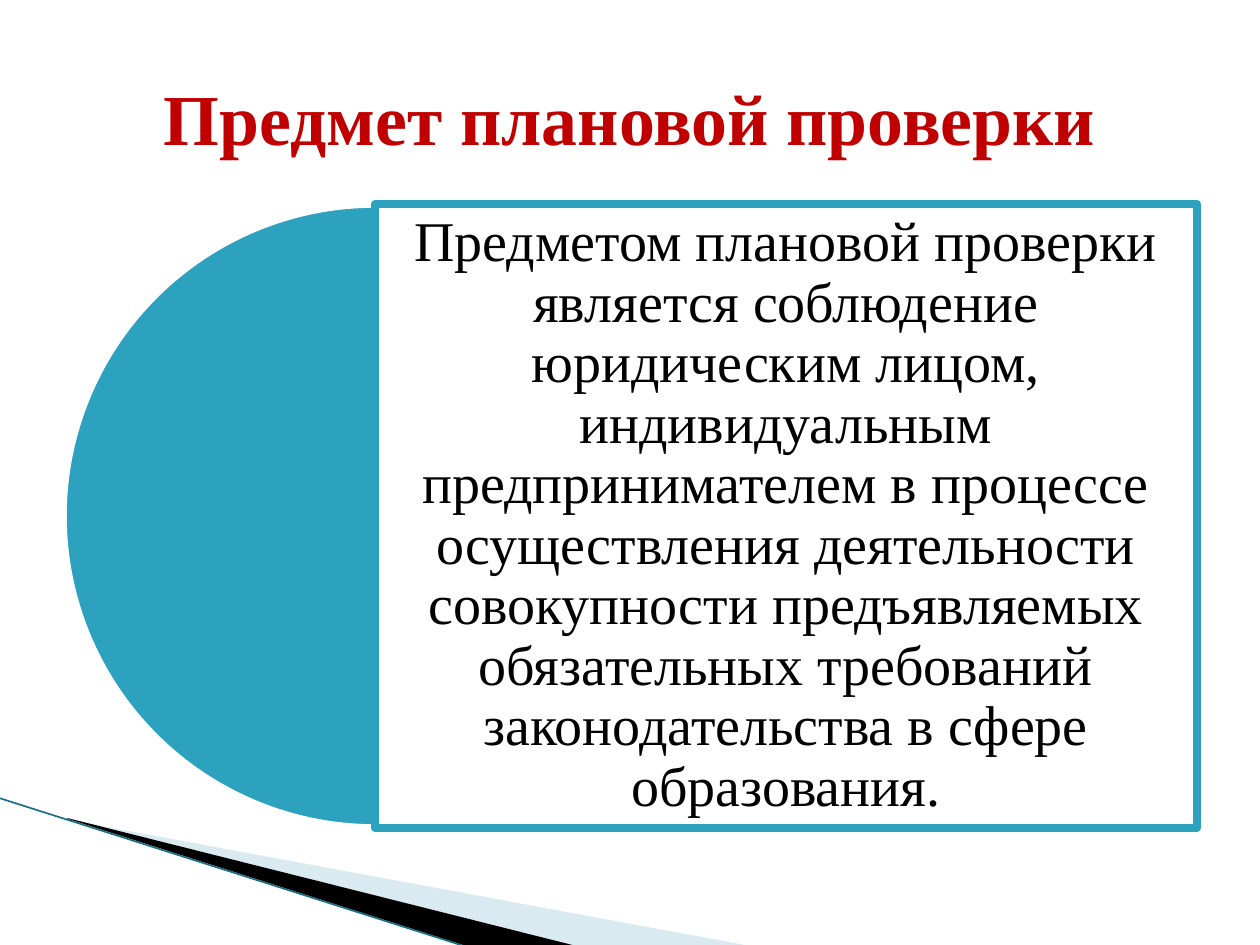
import dataclasses

import lxml.etree
import pptx
import pptx.dml.color
import pptx.enum.shapes
import pptx.enum.text
import pptx.oxml.ns
import pptx.util

EMU_PER_PX = 914400 / 126


@dataclasses.dataclass(frozen=True)
class Theme:
    font: str = "Times New Roman"
    title_size: int = 41
    body_size: int = 32
    border: float = 4.33
    hairline: float = 0.95
    title: str = "C00000"
    text: str = "000000"
    accent: str = "2DA2BF"
    paper: str = "FFFFFF"
    pale: str = "A0CBDC"
    edge: str = "1B6F85"


THEME = Theme()


def px(length):
    return pptx.util.Emu(round(length * EMU_PER_PX))


def rgb(color):
    return pptx.dml.color.RGBColor.from_string(color)


def paint(shape, fill, line=None, opacity=100):
    shape.shadow.inherit = False
    shape.fill.solid()
    shape.fill.fore_color.rgb = rgb(fill)
    if opacity < 100:
        color = shape.fill._xPr.find(".//" + pptx.oxml.ns.qn("a:srgbClr"))
        alpha = lxml.etree.SubElement(color, pptx.oxml.ns.qn("a:alpha"))
        alpha.set("val", str(opacity * 1000))
    if line:
        shape.line.color.rgb = rgb(line)
        shape.line.width = pptx.util.Pt(THEME.border)
    else:
        shape.line.fill.background()


def write(frame, text, size, color, bold=False):
    frame.word_wrap = True
    frame.vertical_anchor = pptx.enum.text.MSO_ANCHOR.MIDDLE
    paragraph = frame.paragraphs[0]
    paragraph.text = text
    paragraph.alignment = pptx.enum.text.PP_ALIGN.CENTER
    paragraph.font.name = THEME.font
    paragraph.font.size = pptx.util.Pt(size)
    paragraph.font.bold = bold
    paragraph.font.color.rgb = rgb(color)
    return paragraph


def add_corner(slide, left, top):
    """Sweeping wedges and edge line in the lower left corner."""
    wedges = [
        ([(70, 22), (751, 148), (576, 148), (70, 21)], THEME.pale, 40),
        ([(68, 20), (577, 148), (470, 149), (69, 21)], THEME.text, 100),
    ]
    for points, color, opacity in wedges:
        corners = [(left + x, top + y) for x, y in points]
        builder = slide.shapes.build_freeform(*corners[0], scale=EMU_PER_PX)
        builder.add_line_segments(corners[1:], close=True)
        paint(builder.convert_to_shape(), color, opacity=opacity)

    edge = slide.shapes.add_connector(
        pptx.enum.shapes.MSO_CONNECTOR.STRAIGHT,
        px(left), px(top), px(left + 468), px(top + 149))
    edge.line.color.rgb = rgb(THEME.edge)
    edge.line.width = pptx.util.Pt(THEME.hairline)
    properties = edge._element.spPr
    lxml.etree.SubElement(properties, pptx.oxml.ns.qn("a:effectLst"))


def add_title(slide, left, top, width, height, text):
    title = slide.shapes.title
    title.left, title.top = px(left), px(top)
    title.width, title.height = px(width), px(height)
    write(title.text_frame, text, THEME.title_size, THEME.title, bold=True)


def add_subject(slide, left, top, width, height, text):
    """Half disc as tall as the box, with the text panel from its centre on."""
    kinds = pptx.enum.shapes.MSO_SHAPE
    half_disc = slide.shapes.add_shape(
        kinds.PIE, px(left), px(top), px(height), px(height))
    half_disc.adjustments[0] = 54  # 90 degrees
    half_disc.adjustments[1] = 162  # 270 degrees
    paint(half_disc, THEME.accent, THEME.paper)

    radius = height // 2
    panel = slide.shapes.add_shape(
        kinds.RECTANGLE, px(left + radius), px(top),
        px(width - radius), px(height))
    paint(panel, THEME.paper, THEME.accent, opacity=90)
    frame = panel.text_frame
    frame.margin_left = frame.margin_right = px(16)
    frame.margin_top = frame.margin_bottom = px(16)
    statement = write(frame, text, THEME.body_size, THEME.text)
    statement.line_spacing = 0.9


def main():
    deck = pptx.Presentation()
    deck.slide_width, deck.slide_height = px(1260), px(945)
    slide = deck.slides.add_slide(deck.slide_layouts.get_by_name("Title Only"))
    add_corner(slide, -1, 798)
    add_subject(
        slide, 63, 204, 1134, 624,
        "Предметом плановой проверки является соблюдение юридическим лицом, "
        "индивидуальным предпринимателем в процессе осуществления "
        "деятельности совокупности предъявляемых обязательных требований "
        "законодательства в сфере образования.")
    add_title(slide, 63, 38, 1134, 158, "Предмет плановой проверки")
    deck.save("out.pptx")


if __name__ == "__main__":
    main()
